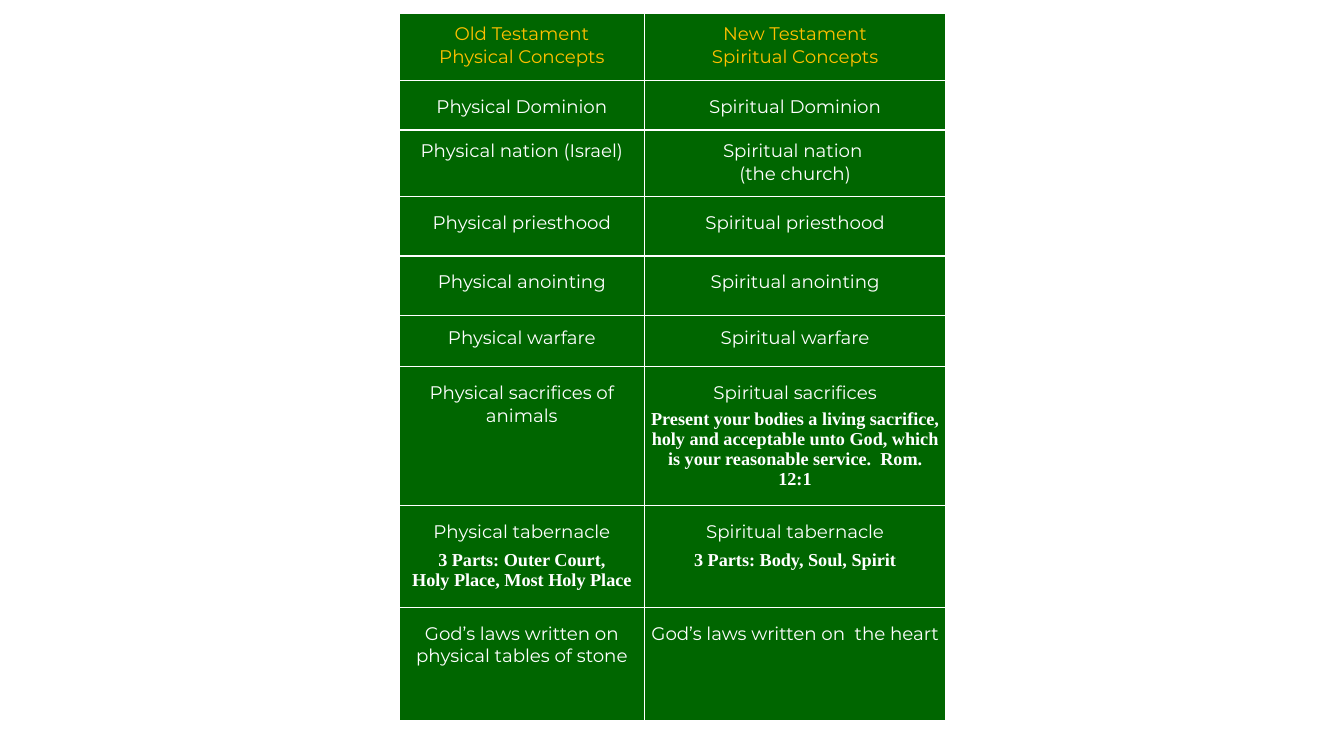
from dataclasses import dataclass

from lxml.etree import SubElement
from pptx import Presentation
from pptx.dml.color import RGBColor
from pptx.enum.text import PP_ALIGN
from pptx.oxml.ns import qn
from pptx.util import Inches, Pt


@dataclass(frozen=True)
class Theme:
    green: str = "006600"
    gold: str = "FFC000"
    white: str = "FFFFFF"
    sans: str = "Montserrat"
    serif: str = "Times New Roman"
    size: int = 13
    rule: int = 1


THEME = Theme()
COLS = (2.43, 2.99)

# Row height, gap above the text, gap above the note (points),
# then the lines and note lines of each side
ROWS = (
    (0.67, 7.3, 0, (("Old Testament", "Physical Concepts"), ()),
     (("New Testament", "Spiritual Concepts"), ())),
    (0.49, 11, 0, (("Physical Dominion",), ()), (("Spiritual Dominion",), ())),
    (0.66, 7.3, 0, (("Physical nation (Israel)",), ()),
     (("Spiritual nation ", "(the church)"), ())),
    (0.59, 11, 0, (("Physical priesthood",), ()), (("Spiritual priesthood",), ())),
    (0.59, 11, 0, (("Physical anointing",), ()), (("Spiritual anointing",), ())),
    (0.51, 8.5, 0, (("Physical warfare",), ()), (("Spiritual warfare",), ())),
    (1.38, 11, 3.7, (("Physical sacrifices of animals",), ()),
     (("Spiritual sacrifices",),
      ("Present your bodies a living sacrifice, holy and acceptable unto God, "
       "which is your reasonable service.  Rom. 12:1",))),
    (1.01, 11, 4.9,
     (("Physical tabernacle",),
      ("3 Parts: Outer Court,", "Holy Place, Most Holy Place")),
     (("Spiritual tabernacle",), ("3 Parts: Body, Soul, Spirit",))),
    (1.12, 11, 0, (("God’s laws written on physical tables of stone",), ()),
     (("God’s laws written on  the heart",), ())),
)


def write(para, text, font=THEME.sans, color=THEME.white, bold=False, gap=0):
    para.alignment = PP_ALIGN.CENTER
    para.space_before = Pt(gap)
    run = para.add_run()
    run.text = text
    run.font.name = font
    run.font.size = Pt(THEME.size)
    run.font.bold = bold
    run.font.color.rgb = RGBColor.from_string(color)


def paint(cell):
    """Give the cell its borders and fill; borders must precede the fill."""
    props = cell._tc.get_or_add_tcPr()
    for side in ("lnL", "lnR", "lnT", "lnB"):
        line = SubElement(props, qn(f"a:{side}"), w=str(Pt(THEME.rule)))
        fill = SubElement(line, qn("a:solidFill"))
        SubElement(fill, qn("a:srgbClr"), val=THEME.white)
    cell.fill.solid()
    cell.fill.fore_color.rgb = RGBColor.from_string(THEME.green)


def fill_cell(cell, lines, notes, top, gap, color):
    paint(cell)
    cell.margin_left = cell.margin_right = Inches(0.06)
    cell.margin_top, cell.margin_bottom = Pt(top), 0
    frame = cell.text_frame
    for i, text in enumerate(lines):
        para = frame.add_paragraph() if i else frame.paragraphs[0]
        write(para, text, color=color)
    for i, text in enumerate(notes):
        write(frame.add_paragraph(), text, font=THEME.serif, bold=True,
              gap=0 if i else gap)


def add_grid(slide, left, top):
    """Place the table of paired concepts with its corner at left, top."""
    high = sum(row[0] for row in ROWS)
    table = slide.shapes.add_table(
        len(ROWS), len(COLS), Inches(left), Inches(top),
        Inches(sum(COLS)), Inches(high)).table
    table.horz_banding = False
    for col, width in zip(table.columns, COLS):
        col.width = Inches(width)
    for r, (height, lead, gap, *sides) in enumerate(ROWS):
        table.rows[r].height = Inches(height)
        color = THEME.white if r else THEME.gold
        for c, (lines, notes) in enumerate(sides):
            fill_cell(table.cell(r, c), lines, notes, lead, gap, color)


def main():
    deck = Presentation()
    deck.slide_width, deck.slide_height = Inches(13.33), Inches(7.5)
    slide = deck.slides.add_slide(deck.slide_layouts[6])
    add_grid(slide, 3.96, 0.13)
    deck.save("out.pptx")


if __name__ == "__main__":
    main()
